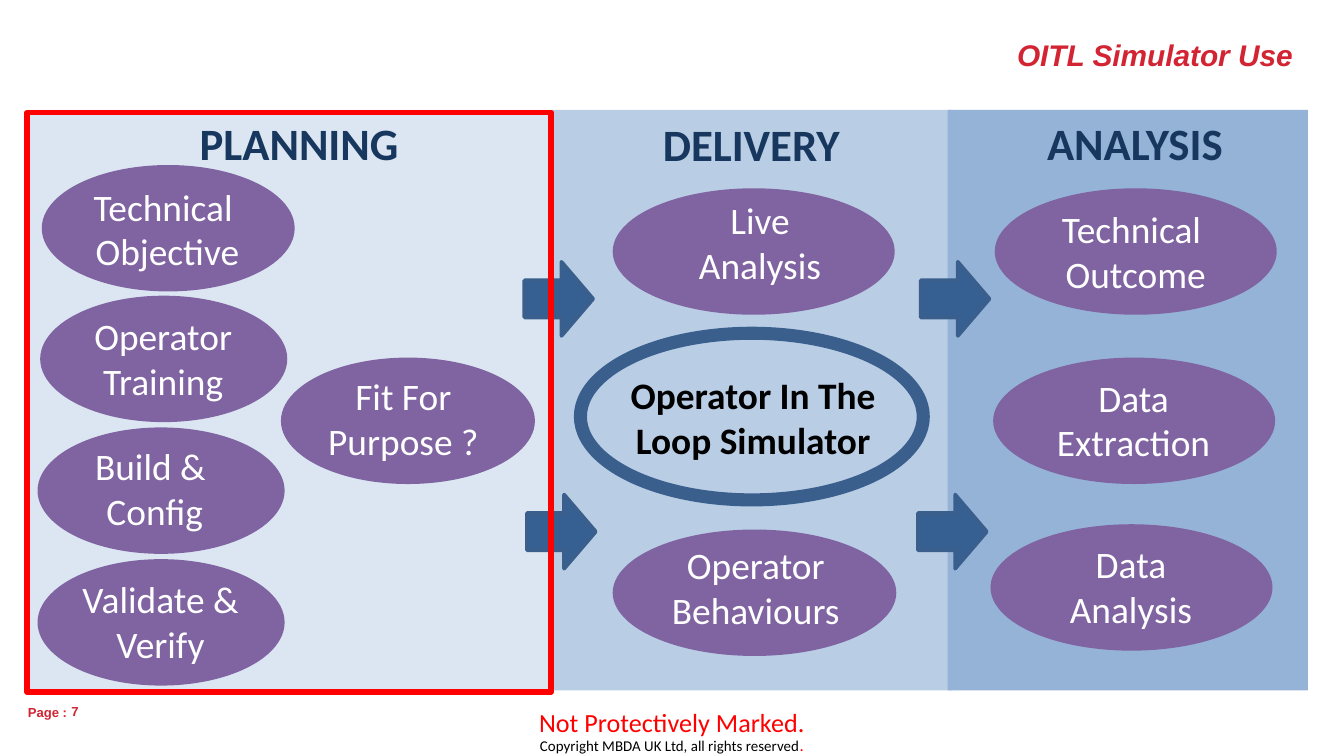
"""Build the OITL Simulator Use slide."""
import pptx
import pptx.dml.color
import pptx.enum.shapes
import pptx.enum.text
import pptx.util

Cm = pptx.util.Cm
SHAPES = pptx.enum.shapes.MSO_SHAPE
ALIGN = pptx.enum.text.PP_ALIGN
ANCHOR = pptx.enum.text.MSO_ANCHOR

THEME = {
    "colours": {
        "planning": "DCE6F2", "delivery": "B9CDE5", "analysis": "95B3D7",
        "activity": "8064A2", "arrow": "376092", "outline": "3A5F8C", "frame": "FF0000",
    },
    "text": {
        "title": {"name": "Arial", "size": 16, "bold": True, "italic": True, "colour": "D22432"},
        "page": {"name": "Arial", "size": 7, "bold": True, "colour": "D22432"},
        "heading": {"name": "Calibri", "size": 24, "bold": True, "colour": "17375E"},
        "activity": {"name": "Calibri", "size": 20, "colour": "FFFFFF"},
        "simulator": {"name": "Calibri", "size": 20, "bold": True, "colour": "000000"},
        "marking": {"name": "Calibri", "size": 14, "colour": "FF0000"},
        "copyright": {"name": "Calibri", "size": 8, "colour": "000000"},
        "stop": {"name": "Calibri", "size": 9, "colour": "FF0000"},
    },
}

presentation = pptx.Presentation()
presentation.slide_width, presentation.slide_height = Cm(25.4), Cm(14.29)
slide = presentation.slides.add_slide(presentation.slide_layouts[5])


def write(shape, paragraphs, alignment=ALIGN.CENTER, **frame_format):
    """Fill a shape with paragraphs, each a list of (text, style) runs."""
    frame = shape.text_frame
    for name, value in {"word_wrap": True, **frame_format}.items():
        setattr(frame, name, value)
    for index, runs in enumerate(paragraphs):
        paragraph = frame.add_paragraph() if index else frame.paragraphs[0]
        paragraph.alignment = alignment
        for text, style in runs:
            run = paragraph.add_run()
            run.text = text
            for name, value in THEME["text"][style].items():
                if name == "colour":
                    run.font.color.rgb = pptx.dml.color.RGBColor.from_string(value)
                else:
                    setattr(run.font, name, pptx.util.Pt(value) if name == "size" else value)


def draw(kind, box, fill=None, line=None, width=0):
    """Add a preset shape with an optional fill and outline."""
    shape = slide.shapes.add_shape(kind, *map(Cm, box))
    shape.shadow.inherit = False
    for format_part, colour in ((shape.fill, fill), (shape.line.fill, line)):
        if colour:
            format_part.solid()
            format_part.fore_color.rgb = pptx.dml.color.RGBColor.from_string(THEME["colours"][colour])
        else:
            format_part.background()
    if line:
        shape.line.width = pptx.util.Pt(width)
    return shape


title = slide.shapes.title
for name, value in {"left": 3.56, "top": 0.23, "width": 21.13, "height": 1.6}.items():
    setattr(title, name, Cm(value))
write(title, [[("OITL Simulator Use", "title")]], ALIGN.RIGHT,
      vertical_anchor=ANCHOR.MIDDLE, auto_size=pptx.enum.text.MSO_AUTO_SIZE.NONE)

footers = [
    ((0, 13.23, 25.4, 0.86), [("Not Protectively Marked.", "marking")]),
    ((0.1, 13.77, 25.2, 0.64),
     [("Copyright MBDA UK Ltd, all rights reserved", "copyright"), (".", "stop")]),
]
for box, runs in footers:
    write(slide.shapes.add_textbox(*map(Cm, box)), [runs])

page_parts = [
    ("Page :", (0.53, 13.31, 0.74, 0.3), ANCHOR.TOP),
    ("7", (1.35, 13.21, 0.51, 0.48), ANCHOR.MIDDLE),
]
for text, box, anchor in page_parts:
    write(slide.shapes.add_textbox(*map(Cm, box)), [[(text, "page")]], ALIGN.LEFT,
          word_wrap=False, vertical_anchor=anchor,
          margin_left=0, margin_top=0, margin_right=0, margin_bottom=0)

panels = [
    ("delivery", 10.41, 7.59, 10.49, 2.08, 7.42),
    ("planning", 0.51, 9.91, 0.51, 2.06, 10.29),
    ("analysis", 17.91, 6.81, 18.21, 2.06, 6.48),
]
for phase, left, width, *_ in panels:
    draw(SHAPES.RECTANGLE, (left, 2.08, width, 10.97), phase)
for phase, _, _, left, top, width in panels:
    heading = slide.shapes.add_textbox(Cm(left), Cm(top), Cm(width), Cm(1.27))
    write(heading, [[(phase.upper(), "heading")]])

draw(SHAPES.OVAL, (10.97, 6.3, 6.48, 3.15), line="outline", width=7)
simulator = slide.shapes.add_textbox(Cm(11.53), Cm(6.91), Cm(5.41), Cm(1.96))
write(simulator, [[("Operator In The Loop Simulator", "simulator")]])

activities = [
    (["Technical ", "Objective"], (0.79, 3.12, 4.78), (1.4, 3.35, 3.53)),
    (["Operator Training"], (0.76, 5.59, 4.67), (0.94, 5.79, 4.29)),
    (["Build & ", "Config"], (0.71, 8.08, 4.67), (0.74, 8.26, 4.37)),
    (["Validate & Verify"], (0.71, 10.57, 4.67), (0.89, 10.77, 4.29)),
    (["Fit For Purpose ?"], (5.31, 6.76, 4.8), (5.87, 6.93, 3.51)),
    (["Live Analysis"], (11.58, 3.56, 5.33), (12.65, 3.61, 3.43)),
    (["Operator Behaviours"], (11.58, 10.01, 5.36), (12.24, 10.13, 4.09)),
    (["Technical ", "Outcome"], (18.8, 3.56, 5.33), (19.74, 3.78, 3.45)),
    (["Data", "Extraction"], (18.77, 6.76, 5.33), (19.38, 6.96, 4.09)),
    (["Data", "Analysis"], (18.72, 9.91, 5.33), (19.33, 10.11, 4.09)),
]
for lines, oval, label in activities:
    draw(SHAPES.OVAL, (*oval, 2.39), "activity")
    label_box = slide.shapes.add_textbox(*map(Cm, (*label, 1.96)))
    write(label_box, [[(line, "activity")] for line in lines])

for left, top in ((9.91, 4.95), (9.96, 9.35), (17.4, 4.95), (17.35, 9.35)):
    arrow = draw(SHAPES.RIGHT_ARROW, (left, top, 1.3, 1.4), "arrow", "outline", 2)
    arrow.adjustments[1] = 0.46

draw(SHAPES.RECTANGLE, (0.51, 2.13, 9.91, 10.95), line="frame", width=3)

presentation.save("out.pptx")
